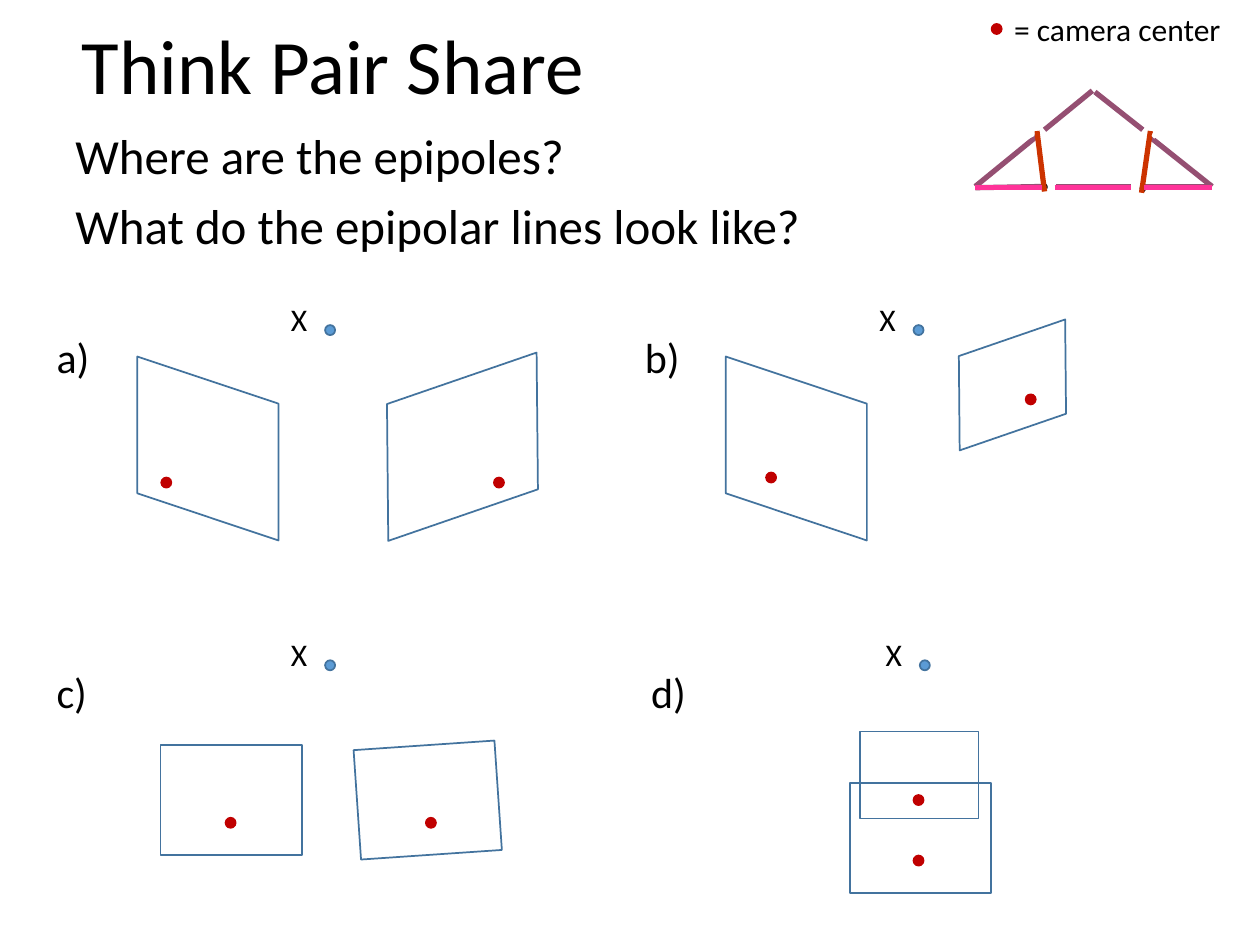
"""Build the epipole discussion slide: four camera arrangements and a small epipolar triangle."""
from dataclasses import dataclass

from pptx import Presentation
from pptx import util as u
from pptx.dml.color import RGBColor
from pptx.enum import shapes, text
from pptx.oxml import parse_xml
from pptx.oxml.ns import nsdecls


@dataclass(frozen=True)
class Theme:
    font: str = "Calibri"
    title: int = 44
    body: int = 28
    label: int = 24
    small: int = 18
    ink: str = "000000"
    outline: str = "43739E"
    point: str = "5B9BD5"
    camera: str = "C00000"
    ray: str = "954F72"
    image_plane: str = "CC3300"
    baseline: str = "FF3399"
    paper: str = "FFFFFF"
    thin: float = 1
    hairline: float = 0.75
    thick: float = 3


THEME = Theme()
COLUMNS, ROWS = 10, 7.5
DOT = 0.08
TITLE = "Think Pair Share"
QUESTIONS = ["Where are the epipoles?", "What do the epipolar lines look like?"]
LEGEND = "= camera center"

LEFT_VIEW = (0.92, 3, 1.46, 1.12, 90, 0.334)
PANELS = [
    {"label": "a)", "origin": (0, 0),
     "frames": [LEFT_VIEW, (2.87, 3.03, 1.6, 1.03, 161, 0.334)],
     "cameras": [(1.28, 3.79), (3.92, 3.79)]},
    {"label": "b)", "origin": (4.67, 0),
     "frames": [LEFT_VIEW, (2.8, 2.7, 1.13, 0.71, 161, 0.334)],
     "cameras": [(1.41, 3.75), (3.47, 3.13)]},
    {"label": "c)", "origin": (0, 2.66),
     "frames": [(1.4, 3.13, 0.87, 1.12, 90, 0), (2.96, 3.13, 0.87, 1.12, 86.1, 0)],
     "cameras": [(1.79, 3.83), (3.38, 3.83)]},
    {"label": "d)", "origin": (4.72, 2.66),
     "frames": [(2.23, 3.02, 0.69, 0.94, 90, 0), (2.15, 3.43, 0.87, 1.12, 90, 0)],
     "cameras": [(2.53, 4.13), (2.53, 3.65)]},
]

RAYS = [(7.74, 1.49, 8.28, 1.48), (8.38, 1.48, 8.98, 1.48), (9.07, 1.48, 9.62, 1.48),
        (9.13, 1.09, 9.62, 1.48), (8.69, 0.73, 9.07, 1.03), (8.29, 1.03, 8.67, 0.72),
        (7.74, 1.48, 8.23, 1.08)]
EPIPOLES = [(8.27, 1.46), (9.05, 1.47)]
IMAGE_PLANES = [(8.29, 1.52, 8.23, 1.04), (9.06, 1.53, 9.13, 1.04)]
BASELINES = [(7.74, 1.49, 8.27, 1.49), (8.37, 1.49, 8.98, 1.49), (9.08, 1.49, 9.62, 1.49)]
GAP_OUTLINE = [(0.02, 0), (0, 0.05), (0.02, 0.07), (0.06, 0.05), (0.06, 0)]
GAPS = [(8.15, 1.03), (9.14, 1.03)]

presentation = Presentation()
presentation.slide_width, presentation.slide_height = u.Inches(COLUMNS), u.Inches(ROWS)
slide = presentation.slides.add_slide(presentation.slide_layouts[6])
CELL = presentation.slide_width / COLUMNS


def grid(*values):
    return [round(value * CELL) for value in values]


def add_text(lines, box, size, spacing=None, before=0, anchor=text.MSO_ANCHOR.TOP):
    frame = slide.shapes.add_textbox(*grid(*box)).text_frame
    frame.word_wrap = True
    frame.vertical_anchor = anchor
    for index, line in enumerate(lines):
        paragraph = frame.add_paragraph() if index else frame.paragraphs[0]
        paragraph.line_spacing = spacing
        paragraph.space_before = u.Pt(before)
        run = paragraph.add_run()
        run.text = line
        run.font.name, run.font.size = THEME.font, u.Pt(size)
        run.font.color.rgb = RGBColor.from_string(THEME.ink)


def paint(shape, fill=None, line=None, width=THEME.thin):
    shape.shadow.inherit = False
    if fill:
        shape.fill.solid()
        shape.fill.fore_color.rgb = RGBColor.from_string(fill)
    else:
        shape.fill.background()
    if line:
        shape.line.color.rgb = RGBColor.from_string(line)
        shape.line.width = u.Pt(width)
    else:
        shape.line.fill.background()


def add_dot(left, top, fill, line, width=THEME.thin, size=(DOT, DOT)):
    dot = slide.shapes.add_shape(shapes.MSO_SHAPE.OVAL, *grid(left, top, *size))
    paint(dot, fill, line, width)


def add_frame(left, top, width, height, rotation, slant):
    frame = slide.shapes.add_shape(shapes.MSO_SHAPE.PARALLELOGRAM,
                                   *grid(left, top, width, height))
    frame.adjustments[0] = slant
    frame.rotation = rotation
    paint(frame, line=THEME.outline)


def add_lines(segments, color):
    for segment in segments:
        line = slide.shapes.add_connector(shapes.MSO_CONNECTOR.STRAIGHT, *grid(*segment))
        line.line.color.rgb = RGBColor.from_string(color)
        line.line.width = u.Pt(THEME.thick)
        line._element.spPr.append(parse_xml(f"<a:effectLst {nsdecls('a')}/>"))


def add_panel(panel):
    across, down = panel["origin"]
    for left, top, *rest in panel["frames"]:
        add_frame(left + across, top + down, *rest)
    add_dot(2.58 + across, 2.58 + down, THEME.point, THEME.outline)
    add_text(["X"], (2.21 + across, 2.33 + down, 0.38, 0.4), THEME.small)
    add_text([panel["label"]], (0.35 + across, 2.58 + down, 0.65, 0.5), THEME.label)
    for left, top in panel["cameras"]:
        add_dot(left + across, top + down, THEME.camera, THEME.camera)


def add_triangle():
    add_lines(RAYS, THEME.ray)
    for left, top in EPIPOLES:
        add_dot(left, top, THEME.point, THEME.ink, THEME.hairline, (0.04, 0.05))
    add_lines(IMAGE_PLANES, THEME.image_plane)
    add_lines(BASELINES, THEME.baseline)
    for left, top in GAPS:
        corners = [grid(left + across, top + down) for across, down in GAP_OUTLINE]
        builder = slide.shapes.build_freeform(*corners[0])
        builder.add_line_segments(corners[1:], close=True)
        paint(builder.convert_to_shape(), THEME.paper)


def main():
    add_text([TITLE], (0.55, -0.01, 8.62, 1.13), THEME.title, 0.9,
             anchor=text.MSO_ANCHOR.MIDDLE)
    add_text(QUESTIONS, (0.5, 1, 9, 1.17), THEME.body, 0.9, 10)
    for panel in PANELS:
        add_panel(panel)
    add_dot(7.87, 0.19, THEME.camera, THEME.camera)
    add_text([LEGEND], (7.95, 0.03, 2.05, 0.4), THEME.small)
    add_triangle()
    presentation.save("out.pptx")


if __name__ == "__main__":
    main()
